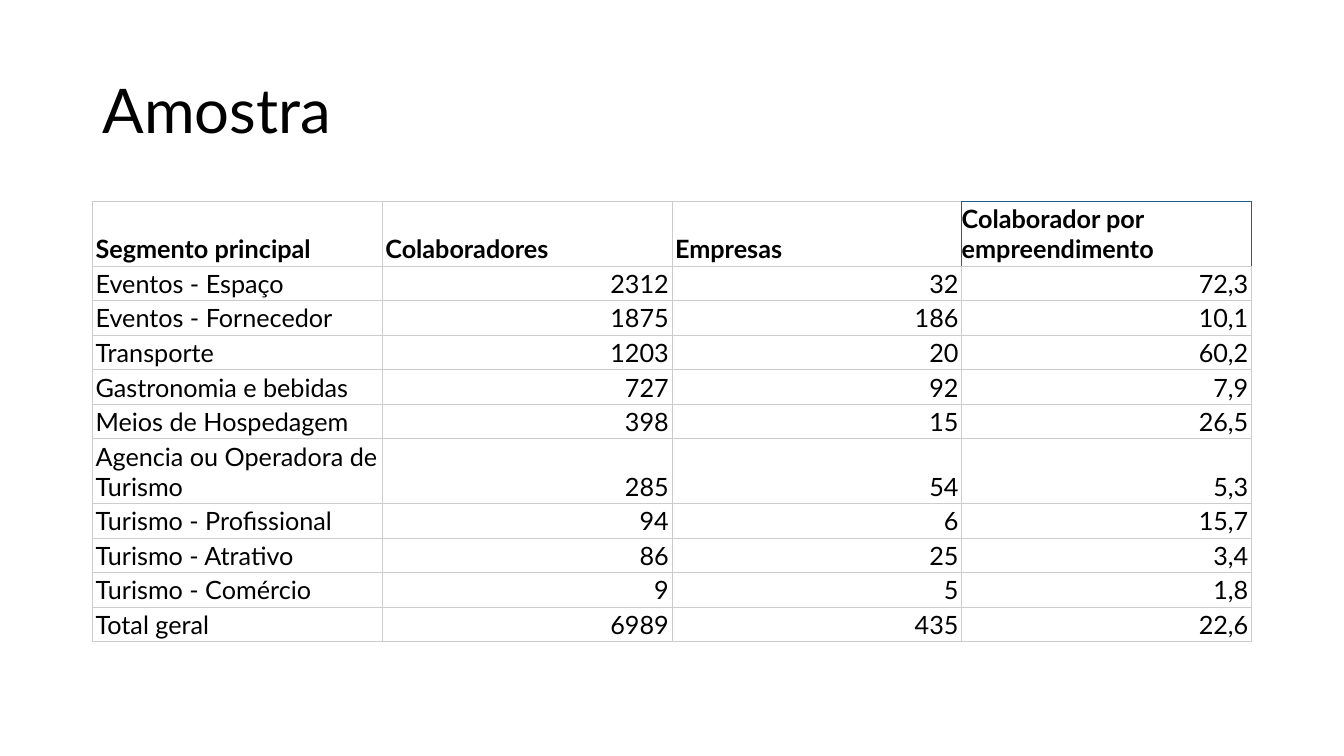
from lxml.etree import SubElement
from pptx import Presentation
from pptx.dml.color import RGBColor
from pptx.enum.text import MSO_ANCHOR, PP_ALIGN
from pptx.oxml.ns import qn
from pptx.util import Cm, Pt

TITLE = "Amostra"
HEADER = ("Segmento principal", "Colaboradores", "Empresas", "Colaborador por empreendimento")
SEGMENTS = [
    ("Eventos - Espaço", "2312", "32", "72,3"),
    ("Eventos - Fornecedor", "1875", "186", "10,1"),
    ("Transporte", "1203", "20", "60,2"),
    ("Gastronomia e bebidas", "727", "92", "7,9"),
    ("Meios de Hospedagem", "398", "15", "26,5"),
    ("Agencia ou Operadora de Turismo", "285", "54", "5,3"),
    ("Turismo - Profissional", "94", "6", "15,7"),
    ("Turismo - Atrativo", "86", "25", "3,4"),
    ("Turismo - Comércio", "9", "5", "1,8"),
    ("Total geral", "6989", "435", "22,6"),
]
ROWS = [HEADER] + SEGMENTS
FONT = "Lato"
BLACK, GRID, ACCENT = "000000", "CCCCCC", "205E92"
LEFT, WIDTH = Cm(2.33), Cm(29.21)
SINGLE_LINE, DOUBLE_LINE = Cm(0.87), Cm(1.63)
LONGEST_LINE = 25  # characters that fit on one line of a column


def color(hex_value):
    return RGBColor.from_string(hex_value)


def format_text(paragraph, size, bold=False):
    paragraph.font.name = FONT
    paragraph.font.size = Pt(size)
    paragraph.font.bold = bold
    paragraph.font.color.rgb = color(BLACK)


def set_borders(cell, border_colors):
    """Draw the left, right, top and bottom borders in the given colours."""
    properties = cell._tc.get_or_add_tcPr()
    for position, (side, hex_value) in enumerate(zip("LRTB", border_colors)):
        line = SubElement(properties, qn(f"a:ln{side}"), w=str(Pt(0.75)))
        fill = SubElement(line, qn("a:solidFill"))
        SubElement(fill, qn("a:srgbClr"), val=hex_value)
        properties.insert(position, line)


def border_colors(row, column):
    if row == 0 and column == 3:
        return ACCENT, ACCENT, ACCENT, GRID
    if row == 0 and column == 2:
        return GRID, ACCENT, GRID, GRID
    return (GRID,) * 4


def fill_cell(cell, text, row, column):
    cell.text = text
    cell.fill.background()
    cell.vertical_anchor = MSO_ANCHOR.BOTTOM
    side_margin = 0 if (row, column) == (0, 3) else Cm(0.08)
    cell.margin_left = cell.margin_right = side_margin
    cell.margin_top = cell.margin_bottom = Cm(0.05)
    paragraph = cell.text_frame.paragraphs[0]
    format_text(paragraph, 18, bold=row == 0)
    if row > 0 and column > 0:
        paragraph.alignment = PP_ALIGN.RIGHT
    set_borders(cell, border_colors(row, column))


def add_title(slide):
    title = slide.shapes.title
    title.left, title.top, title.width, title.height = LEFT, Cm(1.01), WIDTH, Cm(3.68)
    title.text_frame.text = TITLE
    title.text_frame.vertical_anchor = MSO_ANCHOR.MIDDLE
    paragraph = title.text_frame.paragraphs[0]
    paragraph.alignment = PP_ALIGN.LEFT
    paragraph.line_spacing = 0.9
    format_text(paragraph, 44)


def add_sample_table(slide):
    frame = slide.shapes.add_table(len(ROWS), len(HEADER), LEFT, Cm(5.08), WIDTH, Cm(11.09))
    table = frame.table
    table.first_row = table.horz_banding = False
    for row, texts in enumerate(ROWS):
        wraps = max(map(len, texts)) > LONGEST_LINE
        table.rows[row].height = DOUBLE_LINE if wraps else SINGLE_LINE
        for column, text in enumerate(texts):
            fill_cell(table.cell(row, column), text, row, column)


def main():
    presentation = Presentation()
    presentation.slide_width, presentation.slide_height = Cm(33.87), Cm(19.05)
    slide = presentation.slides.add_slide(presentation.slide_layouts[5])
    add_title(slide)
    add_sample_table(slide)
    presentation.save("out.pptx")


if __name__ == "__main__":
    main()
